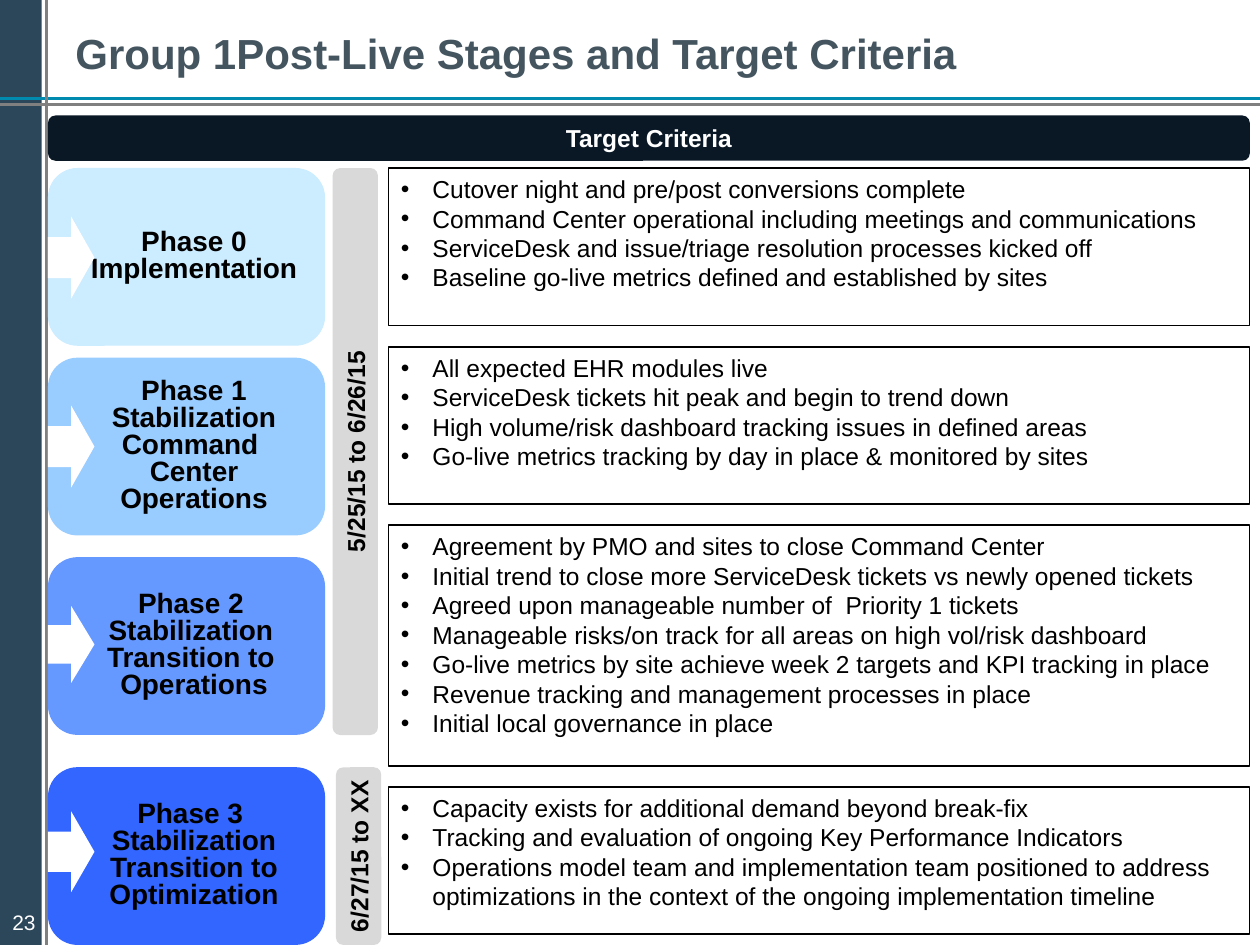
from lxml import etree
from pptx import Presentation
from pptx.dml.color import RGBColor
from pptx.enum.shapes import MSO_CONNECTOR, MSO_SHAPE
from pptx.enum.text import MSO_ANCHOR, PP_ALIGN
from pptx.oxml.ns import qn
from pptx.util import Pt

RECT, ROUND, ARROW = MSO_SHAPE.RECTANGLE, MSO_SHAPE.ROUNDED_RECTANGLE, MSO_SHAPE.RIGHT_ARROW
STRAIGHT = MSO_CONNECTOR.STRAIGHT
LEFT, CENTER = PP_ALIGN.LEFT, PP_ALIGN.CENTER
TOP, MIDDLE = MSO_ANCHOR.TOP, MSO_ANCHOR.MIDDLE

WHITE = RGBColor(0xFF, 0xFF, 0xFF)
BLACK = RGBColor(0, 0, 0)
SLATE = RGBColor(0x2C, 0x46, 0x5A)
TITLE_GRAY = RGBColor(0x45, 0x55, 0x60)
RULE_GRAY = RGBColor(0x80, 0x80, 0x80)
TEAL = RGBColor(0x00, 0x8A, 0xB0)
NAVY = RGBColor(0x0A, 0x18, 0x26)
BAR_GRAY = RGBColor(0xD9, 0xD9, 0xD9)
PHASE_0 = RGBColor(0xCC, 0xEC, 0xFF)
PHASE_1 = RGBColor(0x99, 0xCC, 0xFF)
PHASE_2 = RGBColor(0x66, 0x99, 0xFF)
PHASE_3 = RGBColor(0x33, 0x66, 0xFF)

PHASE_LEFT, PHASE_W, PHASE_H = 27.4, 158.4, 101.6
ARROW_W = 26.6
CRITERIA_LEFT, CRITERIA_W = 222, 492
BAR_W = 25.9

# top, fill, arrow top, arrow height, first-line indent, lines
PHASES = [
    (96, PHASE_0, 123.8, 46.8, 0, ["Phase 0", "Implementation"]),
    (204.4, PHASE_1, 231.8, 46.8, 0,
     ["Phase 1", "Stabilization", "Command ", "Center Operations"]),
    (318.4, PHASE_2, 346.3, 43.9, -3.6,
     ["Phase 2", "Stabilization", "Transition to Operations"]),
    (438.4, PHASE_3, 463.7, 46.1, 0,
     ["Phase 3 ", "Stabilization", "Transition to Optimization"]),
]

# top, height, bullets
CRITERIA = [
    (96, 90, [
        "Cutover night and pre/post conversions complete",
        "Command Center operational including meetings and communications",
        "ServiceDesk and issue/triage resolution processes kicked off",
        "Baseline go-live metrics defined and established by sites",
    ]),
    (198.2, 90, [
        "All expected EHR modules live",
        "ServiceDesk tickets hit peak and begin to trend down",
        "High volume/risk dashboard tracking issues in defined areas",
        "Go-live metrics tracking by day in place & monitored by sites",
    ]),
    (300.2, 137.6, [
        "Agreement by PMO and sites to close Command Center",
        "Initial trend to close more ServiceDesk tickets vs newly opened tickets",
        "Agreed upon manageable number of  Priority 1 tickets",
        "Manageable risks/on track for all areas on high vol/risk dashboard",
        "Go-live metrics by site achieve week 2 targets and KPI tracking in place",
        "Revenue tracking and management processes in place",
        "Initial local governance in place",
    ]),
    (449.6, 84.2, [
        "Capacity exists for additional demand beyond break-fix",
        "Tracking and evaluation of ongoing Key Performance Indicators",
        "Operations model team and implementation team positioned to address "
        "optimizations in the context of the ongoing implementation timeline",
    ]),
]

# left, top, height, period
PERIODS = [
    (190.1, 96, 324, "5/25/15 to 6/26/15"),
    (192, 438.4, 101.6, "6/27/15 to XX"),
]


def add_rule(s, x1, y1, x2, y2, color):
    line = s.shapes.add_connector(STRAIGHT, Pt(x1), Pt(y1), Pt(x2), Pt(y2))
    line.line.color.rgb = color
    line.line.width = Pt(1.5)
    etree.SubElement(line._element.spPr, qn("a:effectLst"))


def add_box(s, kind, left, top, width, height, fill, outline=None):
    sp = s.shapes.add_shape(kind, Pt(left), Pt(top), Pt(width), Pt(height))
    sp.shadow.inherit = False
    sp.fill.solid()
    sp.fill.fore_color.rgb = fill
    if outline is None:
        sp.line.fill.background()
    else:
        sp.line.color.rgb = outline
        sp.line.width = Pt(1)
    return sp


def set_text(sp, lines, size, color=BLACK, bold=False, align=LEFT, anchor=TOP,
             insets=(7.2, 3.6), margin=0, indent=0, spacing=None, bullet=False):
    """Fill a shape with one paragraph per line; insets are (side, top and bottom)."""
    tf = sp.text_frame
    tf.word_wrap = True
    tf.vertical_anchor = anchor
    tf.margin_left = tf.margin_right = Pt(insets[0])
    tf.margin_top = tf.margin_bottom = Pt(insets[1])
    for i, line in enumerate(lines):
        p = tf.paragraphs[0] if i == 0 else tf.add_paragraph()
        p.alignment = align
        if spacing:
            p.line_spacing = spacing
        pPr = p._p.get_or_add_pPr()
        pPr.set("marL", str(Pt(margin)))
        pPr.set("indent", str(Pt(indent)))
        if bullet:
            etree.SubElement(pPr, qn("a:buFont")).set("typeface", "Arial")
            etree.SubElement(pPr, qn("a:buChar")).set("char", "•")
        r = p.add_run()
        r.text = line
        r.font.name = "Arial"
        r.font.size = Pt(size)
        r.font.bold = bold
        r.font.color.rgb = color


def add_text(s, left, top, width, height, text, size, color, **style):
    tb = s.shapes.add_textbox(Pt(left), Pt(top), Pt(width), Pt(height))
    set_text(tb, [text], size, color, **style)


def add_label_bar(s, left, top, width, height, text, fill, color, rotation=0):
    sp = add_box(s, ROUND, left, top, width, height, fill)
    sp.rotation = rotation
    set_text(sp, [text], 14, color, bold=True, align=CENTER, anchor=MIDDLE,
             insets=(3.6, 3.6))


def add_period(s, left, top, height, text):
    """Add a bar that reads upwards, placed by its visible left and top."""
    shift = (height - BAR_W) / 2
    add_label_bar(s, left - shift, top + shift, height, BAR_W, text,
                  BAR_GRAY, BLACK, rotation=270)


def add_phase(s, top, fill, arrow_top, arrow_h, indent, lines):
    sp = add_box(s, ROUND, PHASE_LEFT, top, PHASE_W, PHASE_H, fill)
    set_text(sp, lines, 16, bold=True, align=CENTER, anchor=MIDDLE,
             insets=(2.2, 3.6), margin=8.6, indent=indent, spacing=0.8)
    add_box(s, ARROW, PHASE_LEFT, arrow_top, ARROW_W, arrow_h, WHITE)


def add_criteria(s, top, height, bullets):
    sp = add_box(s, RECT, CRITERIA_LEFT, top, CRITERIA_W, height, WHITE, BLACK)
    set_text(sp, bullets, 14, margin=18, indent=-18, bullet=True)


def add_frame(s):
    add_box(s, RECT, 0, 0, 23.8, 540, SLATE)
    add_rule(s, 0, 59.8, 720, 59.8, RULE_GRAY)
    add_rule(s, 0, 56.2, 720, 56.2, TEAL)
    add_rule(s, 26.6, 0, 26.6, 540, RULE_GRAY)


def main():
    prs = Presentation()
    prs.slide_width, prs.slide_height = Pt(720), Pt(540)
    s = prs.slides.add_slide(prs.slide_layouts[6])
    add_frame(s)
    add_text(s, 36, 6, 564, 48, "Group 1Post-Live Stages and Target Criteria",
             24, TITLE_GRAY, bold=True, anchor=MIDDLE)
    add_text(s, 0, 516.2, 36, 28.8, "23", 12, WHITE)
    add_label_bar(s, PHASE_LEFT, 66, 686.8, BAR_W, "Target Criteria", NAVY, WHITE)
    for phase in PHASES:
        add_phase(s, *phase)
    for criteria in CRITERIA:
        add_criteria(s, *criteria)
    for period in PERIODS:
        add_period(s, *period)
    prs.save("out.pptx")


if __name__ == "__main__":
    main()
